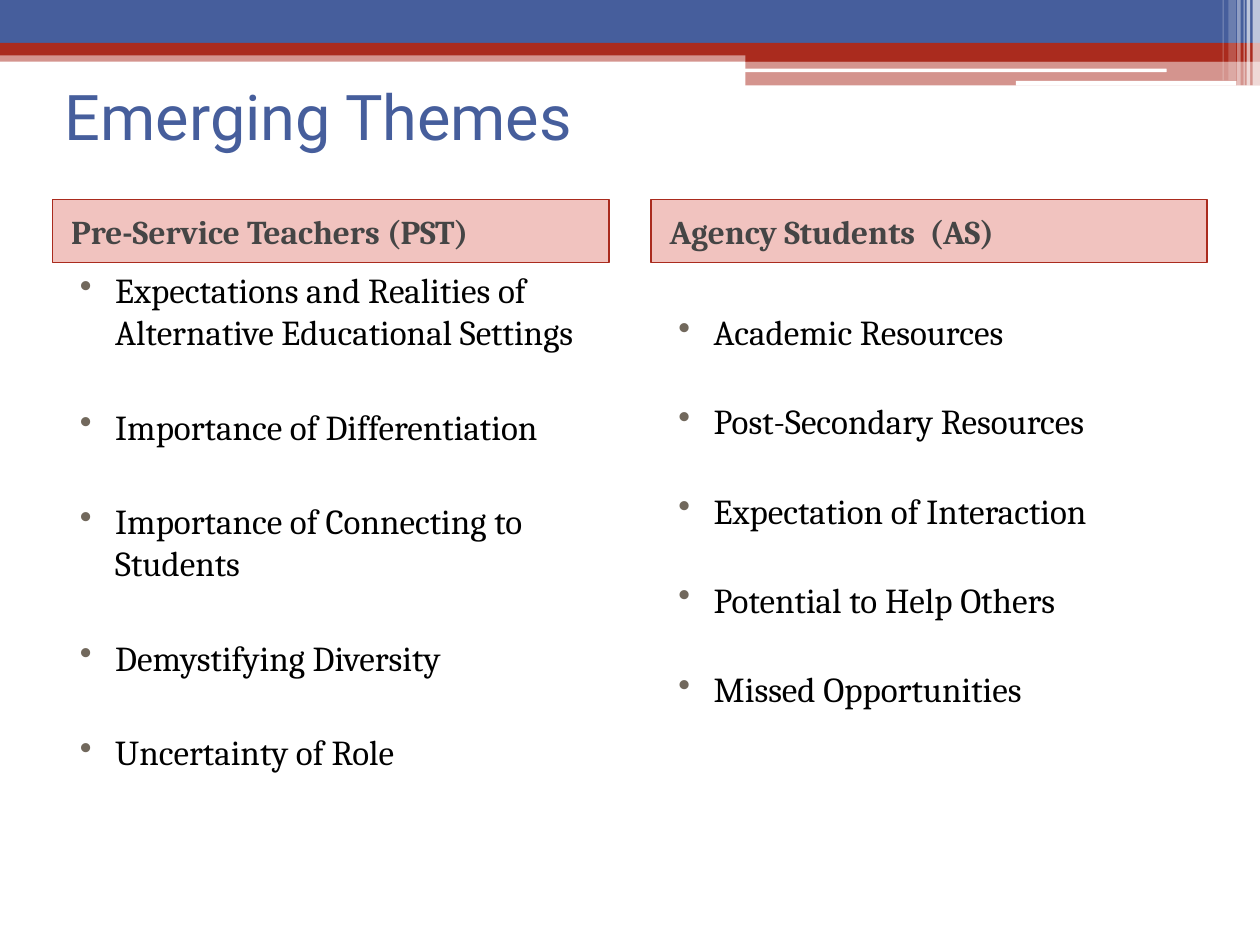
from pptx import Presentation
from pptx.dml.color import RGBColor
from pptx.enum.shapes import MSO_SHAPE
from pptx.enum.text import MSO_ANCHOR, PP_ALIGN
from pptx.oxml.ns import qn
from pptx.util import Pt
from lxml.etree import SubElement

# Content
TITLE = "Emerging Themes"
COLUMNS = [
    # heading, line spacing, gap between items, items
    ("Pre-Service Teachers (PST)", 1, 30, [
        "Expectations and Realities of Alternative Educational Settings",
        "Importance of Differentiation",
        "Importance of Connecting to Students",
        "Demystifying Diversity",
        "Uncertainty of Role",
    ]),
    ("Agency Students  (AS)", 2, 3, [
        "Academic Resources",
        "Post-Secondary Resources",
        "Expectation of Interaction",
        "Potential to Help Others",
        "Missed Opportunities",
    ]),
]


class Theme:
    blue, red, white, black = "465E9C", "AA2B1E", "FFFFFF", "000000"
    pink, gray, bullet = "C81300", "454545", "71685C"
    head, body = "Roboto", "Cambria"
    title, label, item = 36, 19, 20


# Top bands: left, top, width, height, colour, opacity in percent
BANDS = [
    (0, 28.8, 720, 6.5, Theme.red, 50),
    (0, 0, 720, 24.5, Theme.blue, 100),
    (0, 24.5, 720, 7.2, Theme.red, 100),
    (426, 28, 294, 7.2, Theme.red, 100),
    (426, 34.9, 294, 14, Theme.red, 50),
]
# White bars over the bands: left, top, width, height
BARS = [(425.5, 39.2, 241.2, 2), (580.5, 46.2, 126, 2.7)]
# White stripes at the right edge: left, width, height, opacity
STRIPES = [
    (715.8, 4.2, 48.9, 65), (712.4, 2, 48.9, 65), (710.6, 0.7, 48.9, 60),
    (707, 2, 48.9, 40), (702, 4.3, 46, 20), (698.6, 0.7, 46, 30),
]
# Column grid
LEFT, WIDE, STEP = 30, 318, 342
HEAD_TOP, HEAD_TALL, BODY_TALL = 114, 36, 369

deck = Presentation()
deck.slide_width, deck.slide_height = Pt(720), Pt(540)
slide = deck.slides.add_slide(deck.slide_layouts[6])


def color(code):
    return RGBColor.from_string(code)


def block(x, y, w, h, fill, alpha=100, kind=MSO_SHAPE.RECTANGLE):
    shape = slide.shapes.add_shape(kind, Pt(x), Pt(y), Pt(w), Pt(h))
    shape.shadow.inherit = False
    shape.line.fill.background()
    shape.fill.solid()
    shape.fill.fore_color.rgb = color(fill)
    if alpha < 100:
        tint = shape.fill._xPr.find(qn("a:solidFill"))[0]
        SubElement(tint, qn("a:alpha"), val=str(alpha * 1000))
    return shape


def text(x, y, w, h):
    frame = slide.shapes.add_textbox(Pt(x), Pt(y), Pt(w), Pt(h)).text_frame
    frame.word_wrap = True
    return frame


def style(para, face, size, fill, bold=False):
    para.alignment = PP_ALIGN.LEFT
    font = para.font
    font.name, font.size, font.bold = face, Pt(size), bold
    font.color.rgb = color(fill)


def indent(para, left, first=0):
    props = para._p.get_or_add_pPr()
    props.set("marL", str(Pt(left)))
    props.set("indent", str(Pt(first)))
    return props


def dot(para):
    props = indent(para, 28.8, -20.2)
    tint = SubElement(props, qn("a:buClr"))
    SubElement(tint, qn("a:srgbClr"), val=Theme.bullet)
    SubElement(props, qn("a:buChar"), char="•")
    # Bullet marks come before the default run properties
    props.append(props.find(qn("a:defRPr")))


# Header decoration
for band in BANDS:
    block(*band)
for bar in BARS:
    block(*bar, Theme.white, kind=MSO_SHAPE.ROUNDED_RECTANGLE)
for x, w, h, alpha in STRIPES:
    block(x, 0, w, h, Theme.white, alpha)

# Title
frame = text(LEFT, 42, 660, 48)
frame.vertical_anchor = MSO_ANCHOR.MIDDLE
frame.text = TITLE
style(frame.paragraphs[0], Theme.head, Theme.title, Theme.blue)

# Two columns: heading box above a bulleted list
for col, (label, space, gap, items) in enumerate(COLUMNS):
    x = LEFT + col * STEP
    box = block(x, HEAD_TOP, WIDE, HEAD_TALL, Theme.pink, 25)
    box.line.color.rgb = color(Theme.red)
    box.line.width = Pt(1)
    frame = box.text_frame
    frame.vertical_anchor = MSO_ANCHOR.MIDDLE
    frame.text = label
    para = frame.paragraphs[0]
    para.space_before = Pt(3)
    style(para, Theme.body, Theme.label, Theme.gray, True)
    indent(para, 3.6)

    frame = text(x, HEAD_TOP + HEAD_TALL, WIDE, BODY_TALL)
    for row, item in enumerate(items):
        para = frame.add_paragraph() if row else frame.paragraphs[0]
        para.text = item
        para.line_spacing = space
        para.space_before = Pt(gap if row else 3)
        style(para, Theme.body, Theme.item, Theme.black)
        dot(para)

deck.save("out.pptx")
